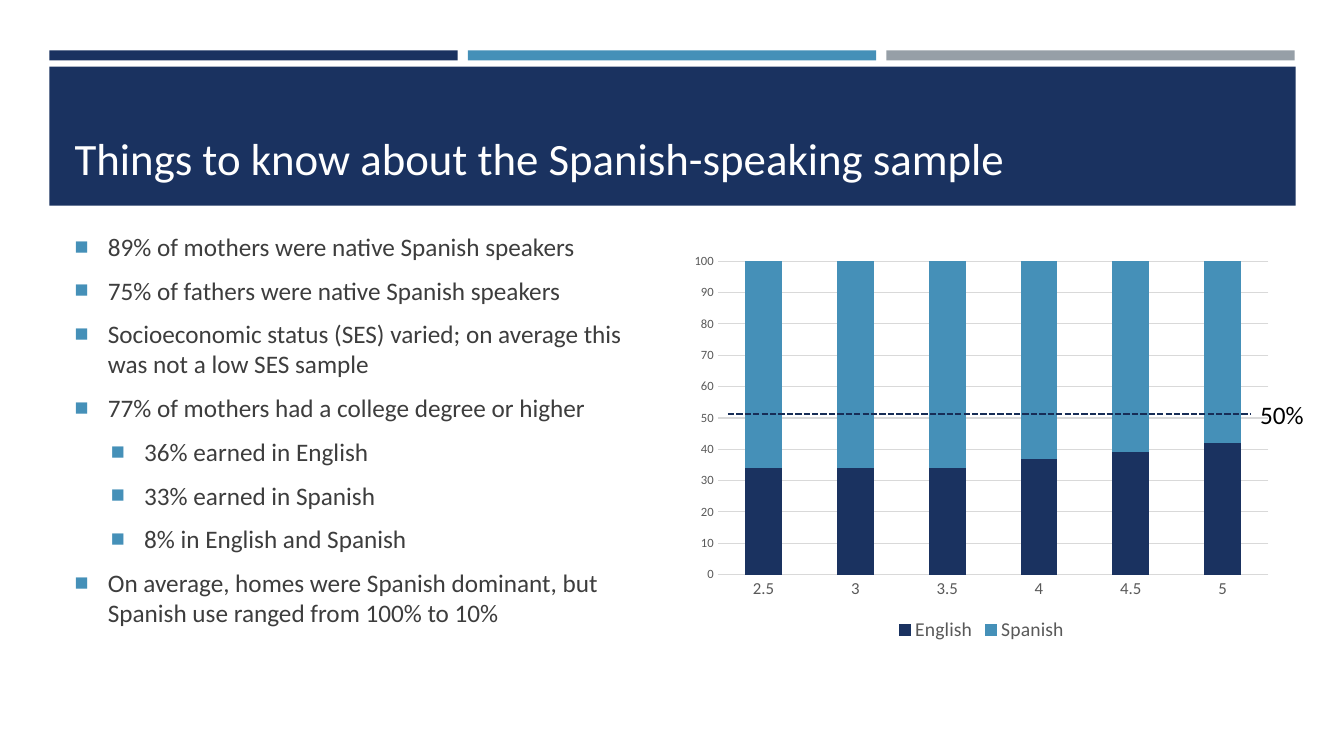
from dataclasses import dataclass

import lxml.etree
import pptx
import pptx.chart.data
import pptx.dml.color
import pptx.enum.chart
import pptx.enum.dml
import pptx.enum.shapes
import pptx.enum.text
import pptx.oxml.ns
import pptx.util

Inches = pptx.util.Inches
Pt = pptx.util.Pt
FONT = "Calibri"
COLORS = {
    "navy": "1A3260", "blue": "4590B8", "gray": "969FA7", "white": "FFFFFF",
    "text": "3D3D3D", "axis": "595959", "grid": "D9D9D9", "dash": "172D56",
    "black": "000000",
}


@dataclass
class Band:
    left: float
    top: float
    width: float
    height: float
    color: str


@dataclass
class Bullet:
    text: str
    level: int = 0


@dataclass
class Series:
    name: str
    values: tuple[int, ...]
    color: str


BANDS = [Band(0.49 + 4.15 * index, 0.5, 4.05, 0.1, color)
         for index, color in enumerate(("navy", "blue", "gray"))]
BANDS.append(Band(0.49, 0.66, 12.36, 1.38, "navy"))

BULLETS = [
    Bullet("89% of mothers were native Spanish speakers"),
    Bullet("75% of fathers were native Spanish speakers"),
    Bullet("Socioeconomic status (SES) varied; on average this was not a low SES sample"),
    Bullet("77% of mothers had a college degree or higher"),
    Bullet("36% earned in English", 1),
    Bullet("33% earned in Spanish", 1),
    Bullet("8% in English and Spanish", 1),
    Bullet("On average, homes were Spanish dominant, but Spanish use ranged from 100% to 10%"),
]

AGES = ("2.5", "3", "3.5", "4", "4.5", "5")
ENGLISH = (34, 34, 34, 37, 39, 42)
LANGUAGES = [
    Series("English", ENGLISH, "navy"),
    Series("Spanish", tuple(100 - value for value in ENGLISH), "blue"),
]


def rgb(color: str) -> pptx.dml.color.RGBColor:
    return pptx.dml.color.RGBColor.from_string(COLORS[color])


def style_font(font, size: float, color: str) -> None:
    font.name = FONT
    font.size = Pt(size)
    font.color.rgb = rgb(color)


def add_span(para, text: str, size: float, color: str) -> None:
    span = para.add_run()
    span.text = text
    style_font(span.font, size, color)


def place(box, left: float, top: float, width: float, height: float) -> None:
    box.left, box.top = Inches(left), Inches(top)
    box.width, box.height = Inches(width), Inches(height)


def add_band(page, band: Band) -> None:
    box = page.shapes.add_shape(
        pptx.enum.shapes.MSO_SHAPE.RECTANGLE, Inches(band.left), Inches(band.top),
        Inches(band.width), Inches(band.height))
    box.shadow.inherit = False
    box.fill.solid()
    box.fill.fore_color.rgb = rgb(band.color)
    box.line.fill.background()


def add_title(page) -> None:
    title = page.shapes.title
    title.element.getparent().append(title.element)
    place(title, 0.64, 0.8, 12.06, 1.08)
    frame = title.text_frame
    frame.word_wrap = True
    frame.auto_size = pptx.enum.text.MSO_AUTO_SIZE.NONE
    frame.vertical_anchor = pptx.enum.text.MSO_ANCHOR.BOTTOM
    para = frame.paragraphs[0]
    para.alignment = pptx.enum.text.PP_ALIGN.LEFT
    add_span(para, "Things to know about the Spanish-speaking sample", 32, "white")


def add_bullet(para, bullet: Bullet) -> None:
    para.level = bullet.level
    para.space_before = Pt(3.6)
    para.space_after = Pt(6)
    add_span(para, bullet.text, 18, "text")
    qn = pptx.oxml.ns.qn
    properties = para._p.get_or_add_pPr()
    properties.set("marL", str(Inches(0.33 + 0.36 * bullet.level)))
    properties.set("indent", str(Inches(-0.33)))
    color = lxml.etree.SubElement(properties, qn("a:buClr"))
    lxml.etree.SubElement(color, qn("a:srgbClr"), val=COLORS["blue"])
    lxml.etree.SubElement(properties, qn("a:buSzPct"), val="92000")
    lxml.etree.SubElement(properties, qn("a:buChar"), char="■")


def add_body(page) -> None:
    body = page.placeholders[1]
    place(body, 0.64, 2.44, 5.93, 3.97)
    frame = body.text_frame
    frame.word_wrap = True
    frame.auto_size = pptx.enum.text.MSO_AUTO_SIZE.NONE
    frame.vertical_anchor = pptx.enum.text.MSO_ANCHOR.MIDDLE
    frame.margin_bottom = Inches(0.38)
    for index, bullet in enumerate(BULLETS):
        para = frame.add_paragraph() if index else frame.paragraphs[0]
        add_bullet(para, bullet)


def add_language_chart(page) -> None:
    data = pptx.chart.data.CategoryChartData()
    data.categories = AGES
    for language in LANGUAGES:
        data.add_series(language.name, language.values)
    chart = page.shapes.add_chart(
        pptx.enum.chart.XL_CHART_TYPE.COLUMN_STACKED, Inches(6.77), Inches(2.44),
        Inches(5.93), Inches(3.97), data).chart
    style_font(chart.font, 10, "black")
    chart.has_title = False
    chart.has_legend = True
    chart.legend.position = pptx.enum.chart.XL_LEGEND_POSITION.BOTTOM
    chart.legend.include_in_layout = False
    style_font(chart.legend.font, 14, "axis")

    plot = chart.plots[0]
    plot.gap_width, plot.overlap = 150, 100
    plot.vary_by_categories = False
    for series, language in zip(plot.series, LANGUAGES):
        series.format.fill.solid()
        series.format.fill.fore_color.rgb = rgb(language.color)

    for axis, size in ((chart.category_axis, 12), (chart.value_axis, 9)):
        axis.major_tick_mark = pptx.enum.chart.XL_TICK_MARK.NONE
        axis.minor_tick_mark = pptx.enum.chart.XL_TICK_MARK.NONE
        style_font(axis.tick_labels.font, size, "axis")
    value_axis = chart.value_axis
    value_axis.minimum_scale, value_axis.maximum_scale = 0, 100
    value_axis.major_unit = 10
    value_axis.has_major_gridlines = True
    value_axis.format.line.fill.background()
    for line in (chart.category_axis.format.line, value_axis.major_gridlines.format.line):
        line.color.rgb = rgb("grid")
        line.width = Pt(0.75)


def add_half_mark(page) -> None:
    label = page.shapes.add_textbox(Inches(12.4), Inches(3.91), Inches(0.65), Inches(0.4))
    label.text_frame.word_wrap = True
    label.text_frame.auto_size = pptx.enum.text.MSO_AUTO_SIZE.SHAPE_TO_FIT_TEXT
    add_span(label.text_frame.paragraphs[0], "50%", 18, "black")
    mark = page.shapes.add_connector(
        pptx.enum.shapes.MSO_CONNECTOR.STRAIGHT, Inches(7.22), Inches(4.11),
        Inches(12.4), Inches(4.11))
    mark.end_connect(label, 1)
    mark.line.color.rgb = rgb("dash")
    mark.line.width = Pt(1.5)
    mark.line.dash_style = pptx.enum.dml.MSO_LINE.SQUARE_DOT
    lxml.etree.SubElement(mark.element.spPr, pptx.oxml.ns.qn("a:effectLst"))


def main() -> None:
    deck = pptx.Presentation()
    deck.slide_width, deck.slide_height = Inches(13.33), Inches(7.5)
    page = deck.slides.add_slide(deck.slide_layouts[1])
    for band in BANDS:
        add_band(page, band)
    add_title(page)
    add_body(page)
    add_language_chart(page)
    add_half_mark(page)
    deck.save("out.pptx")


if __name__ == "__main__":
    main()
